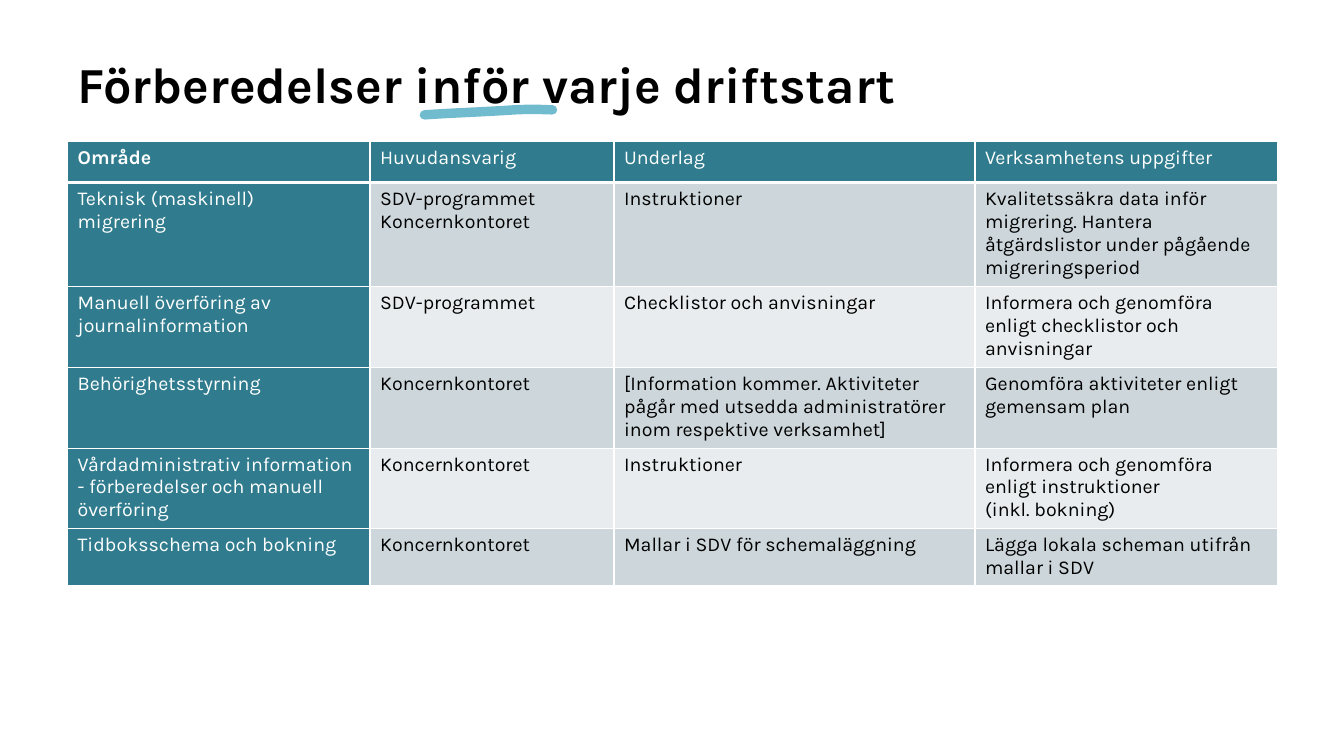
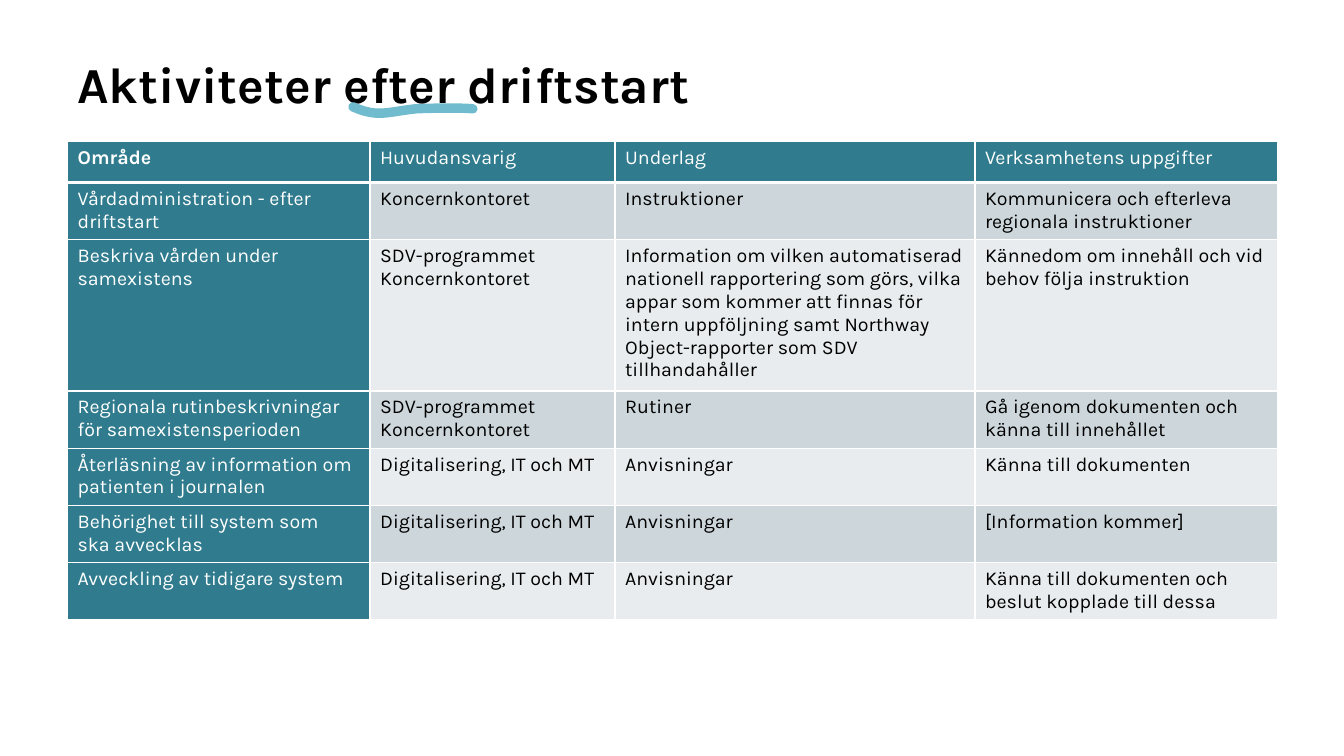
from lxml.etree import SubElement
from pptx import Presentation
from pptx.dml.color import RGBColor as Rgb
from pptx.enum.text import MSO_ANCHOR as Anchor
from pptx.oxml.ns import qn
from pptx.util import Inches, Pt

HUES = {"head": "307C8E", "dark": "CDD7DB", "light": "E8ECEE",
        "mark": "70BCCE", "white": "FFFFFF", "black": "000000"}
FONTS = {
    "title": {"name": "Karla", "size": Pt(36), "bold": True},
    "cell": {"name": "Karla", "size": Pt(14), "bold": False},
    "lead": {"name": "Karla", "size": Pt(14), "bold": True},
}
TITLE = (0.67, 0.39, 12, 0.82)
GRID = (0.67, 1.4, 12, 0.41)
HEADS = ["Område", "Huvudansvarig", "Underlag", "Verksamhetens uppgifter"]
BOTH = "SDV-programmet\nKoncernkontoret"
UNIT = "Digitalisering, IT och MT"

BEFORE = [
    ["Teknisk (maskinell)\nmigrering", BOTH, "Instruktioner",
     "Kvalitetssäkra data inför migrering. Hantera åtgärdslistor under pågående migreringsperiod"],
    ["Manuell överföring av journalinformation", "SDV-programmet",
     "Checklistor och anvisningar",
     "Informera och genomföra enligt checklistor och anvisningar"],
    ["Behörighetsstyrning", "Koncernkontoret",
     "[Information kommer. Aktiviteter pågår med utsedda administratörer inom respektive verksamhet]",
     "Genomföra aktiviteter enligt gemensam plan"],
    ["Vårdadministrativ information - förberedelser och manuell överföring",
     "Koncernkontoret", "Instruktioner",
     "Informera och genomföra enligt instruktioner\n(inkl. bokning)"],
    ["Tidboksschema och bokning", "Koncernkontoret",
     "Mallar i SDV för schemaläggning",
     "Lägga lokala scheman utifrån mallar i SDV"],
]
AFTER = [
    ["Vårdadministration - efter driftstart", "Koncernkontoret", "Instruktioner",
     "Kommunicera och efterleva regionala instruktioner"],
    ["Beskriva vården under samexistens", BOTH,
     "Information om vilken automatiserad nationell rapportering som görs, vilka appar "
     "som kommer att finnas för intern uppföljning samt Northway Object-rapporter "
     "som SDV tillhandahåller",
     "Kännedom om innehåll och vid behov följa instruktion"],
    ["Regionala rutinbeskrivningar för samexistensperioden", BOTH, "Rutiner",
     "Gå igenom dokumenten och känna till innehållet"],
    ["Återläsning av information om patienten i journalen", UNIT, "Anvisningar",
     "Känna till dokumenten"],
    ["Behörighet till system som\nska avvecklas", UNIT, "Anvisningar",
     "[Information kommer]"],
    ["Avveckling av tidigare system", UNIT, "Anvisningar",
     "Känna till dokumenten och beslut kopplade till dessa"],
]

PAGES = [
    {"title": "Förberedelser inför varje driftstart", "rows": BEFORE,
     "cols": [3, 2.42, 3.58, 3], "spot": (4.21, 1.09),
     "curve": [(0, 0.05), (0.3, 0.03), (0.6, 0.02), (0.9, 0),
               (1.11, -0.01), (1.19, 0), (1.27, 0)]},
    {"title": "Aktiviteter efter driftstart", "rows": AFTER,
     "cols": [3, 2.43, 3.57, 3], "spot": (3.5, 1.06),
     "curve": [(0, 0), (0.25, 0.11), (0.34, 0.05), (0.62, 0.02),
               (0.82, 0.01), (1.11, 0.01), (1.19, 0.02)]},
]


def tint(name):
    return Rgb.from_string(HUES[name])


def write(frame, text, form, hue):
    frame.text = text
    for para in frame.paragraphs:
        for run in para.runs:
            for key, value in FONTS[form].items():
                setattr(run.font, key, value)
            run.font.color.rgb = tint(hue)


def add_title(slide, box, text):
    frame = slide.shapes.add_textbox(*map(Inches, box)).text_frame
    frame.word_wrap = True
    frame.vertical_anchor = Anchor.MIDDLE
    write(frame, text, "title", "black")
    frame.paragraphs[0].line_spacing = 1.1


def add_edges(cell, widths):
    props = cell._tc.get_or_add_tcPr()
    for side, width in zip("LRTB", widths):
        line = SubElement(props, qn(f"a:ln{side}"), w=str(Pt(width)))
        fill = SubElement(line, qn("a:solidFill"))
        SubElement(fill, qn("a:srgbClr"), val=HUES["white"])


def add_grid(slide, box, cols, rows):
    left, top, width, step = box
    lines = [HEADS, *rows]
    area = map(Inches, (left, top, width, step * len(lines)))
    table = slide.shapes.add_table(len(lines), len(cols), *area).table
    table.horz_banding = False
    for col, size in zip(table.columns, cols):
        col.width = Inches(size)
    for y, line in enumerate(lines):
        table.rows[y].height = Inches(step)
        for x, text in enumerate(line):
            cell = table.cell(y, x)
            edge = y == 0 or x == 0
            add_edges(cell, (1, 1, 3 if y == 1 else 1, 3 if y == 0 else 1))
            cell.fill.solid()
            cell.fill.fore_color.rgb = tint("head" if edge else "dark" if y % 2 else "light")
            write(cell.text_frame, text, "lead" if x == y == 0 else "cell",
                  "white" if edge else "black")


def bend(knots, t):
    ratios = ((1 - t) ** 3, 3 * t * (1 - t) ** 2, 3 * t * t * (1 - t), t ** 3)
    return [sum(r * knot[axis] for r, knot in zip(ratios, knots)) for axis in (0, 1)]


def add_stroke(slide, spot, curve, steps=12):
    dots = [curve[0]]
    for start in range(0, len(curve) - 1, 3):
        dots += [bend(curve[start:start + 4], n / steps) for n in range(1, steps + 1)]
    dots = [(Inches(spot[0] + x), Inches(spot[1] + y)) for x, y in dots]
    build = slide.shapes.build_freeform(*dots[0])
    build.add_line_segments(dots[1:], close=False)
    stroke = build.convert_to_shape()
    stroke.shadow.inherit = False
    stroke.fill.background()
    stroke.line.color.rgb = tint("mark")
    stroke.line.width = Pt(6.75)
    line = stroke.line._get_or_add_ln()
    line.set("cap", "rnd")
    SubElement(line, qn("a:round"))


def add_page(deck, page):
    slide = deck.slides.add_slide(deck.slide_layouts[6])
    add_title(slide, TITLE, page["title"])
    add_grid(slide, GRID, page["cols"], page["rows"])
    add_stroke(slide, page["spot"], page["curve"])


def main():
    deck = Presentation()
    deck.slide_width, deck.slide_height = Inches(13.33), Inches(7.5)
    for page in PAGES:
        add_page(deck, page)
    deck.save("out.pptx")


if __name__ == "__main__":
    main()
